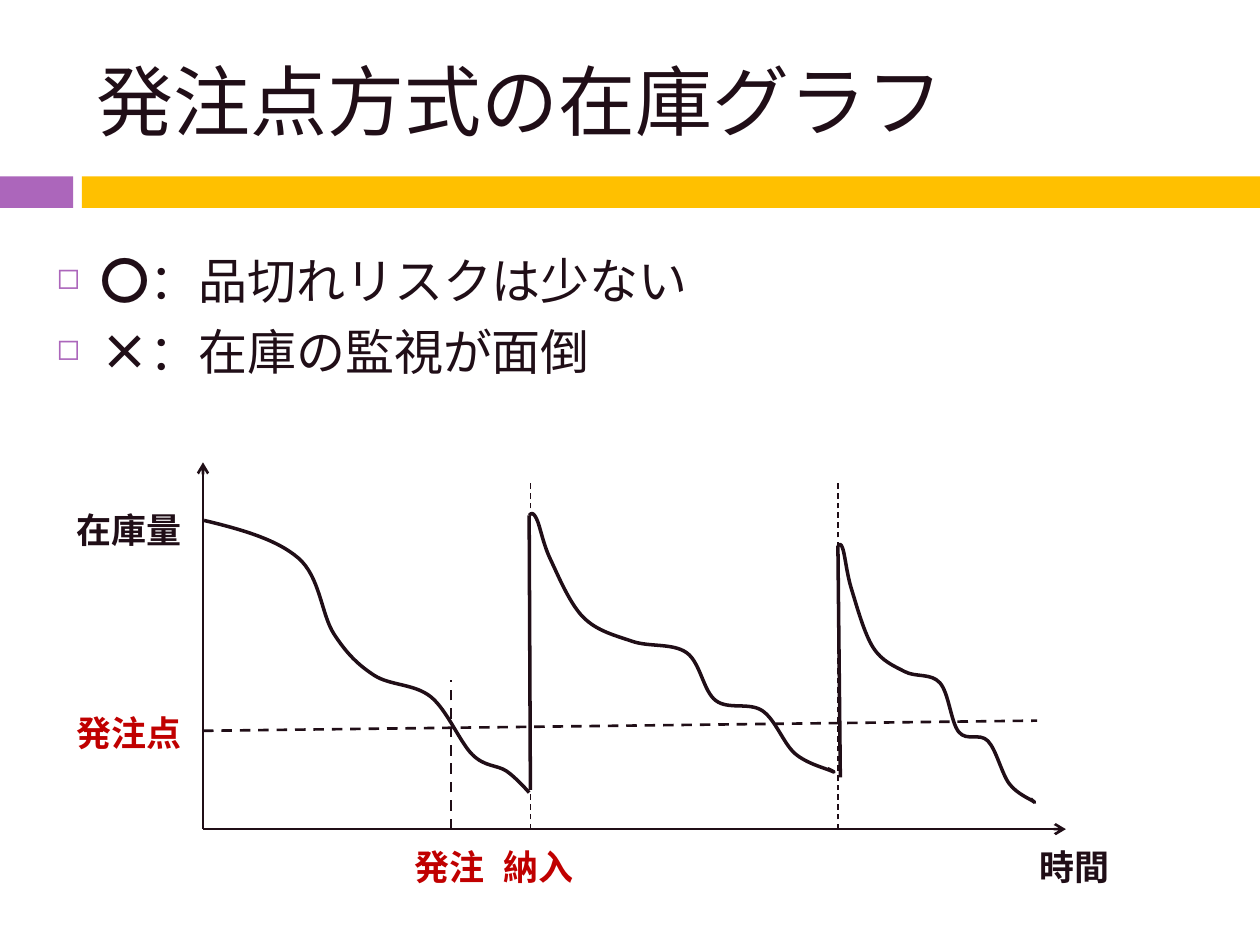
import pptx
import pptx.dml.color
import pptx.enum.dml
import pptx.enum.shapes
import pptx.enum.text
import pptx.oxml
import pptx.oxml.ns
import pptx.util
import lxml.etree

Pt = pptx.util.Pt
FONT = "Noto Sans CJK JP"
INK, RED, PURPLE, AMBER = "200E17", "C00000", "AC66BB", "FFC000"

ORIGIN_X, ORIGIN_Y = 116, 473.8
ORDER_X, DELIVERY_X, NEXT_DELIVERY_X = 257.8, 303.1, 478.8

# Each stock curve: knots, then the tangents at its start and end.
STOCK_CURVES = [
    ([(116.6, 297.4), (170.6, 319), (190.8, 362.2), (213.8, 385.9),
      (246.2, 398.2), (270, 431.3), (289.4, 440.6), (302.4, 452.9)],
     (20.9, 5), (0, 0)),
    ([(302.4, 294.5), (306.7, 296.6), (314.6, 319.7), (333.4, 352.8),
      (361.4, 366.5), (392.4, 373), (409, 400.3), (435.6, 406.1),
      (454.3, 430.6), (475.2, 440.6), (473, 439.2)],
     (1.4, -1.4), (-2.9, -1.4)),
    ([(478.8, 311.8), (481.7, 313.9), (486.7, 337), (499, 370.1),
      (517, 383.8), (537.1, 390.2), (547.9, 418.3), (564.5, 423.4),
      (576.7, 447.8), (590.4, 457.9), (589, 456.5)],
     (0.7, -0.7), (-1.4, -1.4)),
]


def color(hex_text):
    return pptx.dml.color.RGBColor.from_string(hex_text)


def add_child(parent, tag, **attributes):
    child = lxml.etree.SubElement(parent, pptx.oxml.ns.qn(tag))
    for name, value in attributes.items():
        child.set(name, value)
    return child


def add_bar(page, left, width, fill):
    bar = page.shapes.add_shape(pptx.enum.shapes.MSO_SHAPE.RECTANGLE,
                                Pt(left), Pt(100.8), Pt(width), Pt(18))
    bar.shadow.inherit = False
    bar.fill.solid()
    bar.fill.fore_color.rgb = color(fill)
    bar.line.fill.background()


def add_box(page, left, top, width, height, middle=False):
    box = page.shapes.add_textbox(Pt(left), Pt(top), Pt(width), Pt(height))
    box.text_frame.word_wrap = True
    if middle:
        box.text_frame.vertical_anchor = pptx.enum.text.MSO_ANCHOR.MIDDLE
    return box.text_frame


def add_span(para, text, size, hex_text=INK, bold=False):
    span = para.add_run()
    span.text = text
    span.font.size = Pt(size)
    span.font.bold = bold
    span.font.color.rgb = color(hex_text)
    span.font.name = FONT
    add_child(span.font._element, "a:ea", typeface=FONT)


def add_label(page, text, left, top, width, hex_text=INK):
    frame = add_box(page, left, top, width, 31.7)
    add_span(frame.paragraphs[0], text, 20, hex_text, bold=True)


def add_bullets(page, items):
    frame = add_box(page, 25.2, 139.7, 674.6, 385.2)
    for index, (mark, text) in enumerate(items):
        para = frame.add_paragraph() if index else frame.paragraphs[0]
        para.space_before = Pt(7)
        settings = para._p.get_or_add_pPr()
        settings.set("marL", str(Pt(25.2)))
        settings.set("indent", str(-Pt(25.2)))
        add_child(add_child(settings, "a:buClr"), "a:srgbClr", val=PURPLE)
        add_child(settings, "a:buSzPct", val="60000")
        add_child(settings, "a:buChar", char="◻")
        add_span(para, mark, 28, bold=True)
        add_span(para, text, 28)


def add_line(page, start, end, width, dashed=False, arrow=False):
    line = page.shapes.add_connector(
        pptx.enum.shapes.MSO_CONNECTOR.STRAIGHT,
        *(Pt(value) for value in (*start, *end)))
    line.line.color.rgb = color(INK)
    line.line.width = Pt(width)
    if dashed:
        line.line.dash_style = pptx.enum.dml.MSO_LINE.DASH
    if arrow:
        add_child(line.line._get_or_add_ln(), "a:tailEnd", type="arrow")
    add_child(line._element.spPr, "a:effectLst")


def bezier_points(knots, first, last):
    """Return control points and knots of a Catmull-Rom spline."""
    inner = [((c[0] - a[0]) / 6, (c[1] - a[1]) / 6)
             for a, c in zip(knots, knots[2:])]
    tangents = [first, *inner, last]
    points = []
    for i, (a, b) in enumerate(zip(knots, knots[1:])):
        out, into = tangents[i], tangents[i + 1]
        points += [(a[0] + out[0], a[1] + out[1]),
                   (b[0] - into[0], b[1] - into[1]), b]
    return points


def add_curve(page, knots, first, last):
    points = [(Pt(x), Pt(y)) for x, y in bezier_points(knots, first, last)]
    builder = page.shapes.build_freeform(Pt(knots[0][0]), Pt(knots[0][1]))
    builder.add_line_segments(points, close=False)
    curve = builder.convert_to_shape()
    curve.shadow.inherit = False
    curve.fill.background()
    curve.line.color.rgb = color(INK)
    curve.line.width = Pt(2)
    # Every three straight segments become one cubic segment.
    segments = list(curve._element.iter(pptx.oxml.ns.qn("a:lnTo")))
    outline = segments[0].getparent()
    for i in range(0, len(segments), 3):
        cubic = add_child(outline, "a:cubicBezTo")
        for segment in segments[i:i + 3]:
            cubic.append(segment[0])
            outline.remove(segment)


def add_stock_graph(page):
    origin = (ORIGIN_X, ORIGIN_Y)
    add_line(page, origin, (ORIGIN_X, 264.2), 1.5, arrow=True)
    add_line(page, origin, (609.1, ORIGIN_Y), 1.5, arrow=True)
    for x in (DELIVERY_X, NEXT_DELIVERY_X):
        add_line(page, (x, ORIGIN_Y), (x, 275.8), 0.79, dashed=True)
    for curve in STOCK_CURVES:
        add_curve(page, *curve)
    add_line(page, (DELIVERY_X, 451.4), (302.4, 294.5), 2)
    add_line(page, (480.2, 444.2), (NEXT_DELIVERY_X, 311.8), 2)
    add_line(page, (ORIGIN_X, 417.6), (592.6, 411.8), 1.5, dashed=True)
    add_line(page, (ORDER_X, ORIGIN_Y), (ORDER_X, 388.8), 1.5, dashed=True)

    add_label(page, "在庫量", 36.7, 287.3, 79.2)
    add_label(page, "発注点", 36.7, 403.2, 79.2, RED)
    add_label(page, "発注", 229.7, 479.5, 56.9, RED)
    add_label(page, "納入", 280.8, 479.5, 56.9, RED)
    add_label(page, "時間", 586.8, 479.5, 62.6)


def main():
    deck = pptx.Presentation()
    deck.slide_width, deck.slide_height = Pt(720), Pt(540)
    page = deck.slides.add_slide(deck.slide_layouts[6])
    add_bar(page, 0, 41.8, PURPLE)
    add_bar(page, 46.8, 673.2, AMBER)
    title = add_box(page, 48.2, 18, 642.2, 77.8, middle=True)
    add_span(title.paragraphs[0], "発注点方式の在庫グラフ", 44)
    add_bullets(page, [("〇", "：品切れリスクは少ない"),
                       ("×", "：在庫の監視が面倒")])
    add_stock_graph(page)
    deck.save("out.pptx")


if __name__ == "__main__":
    main()
